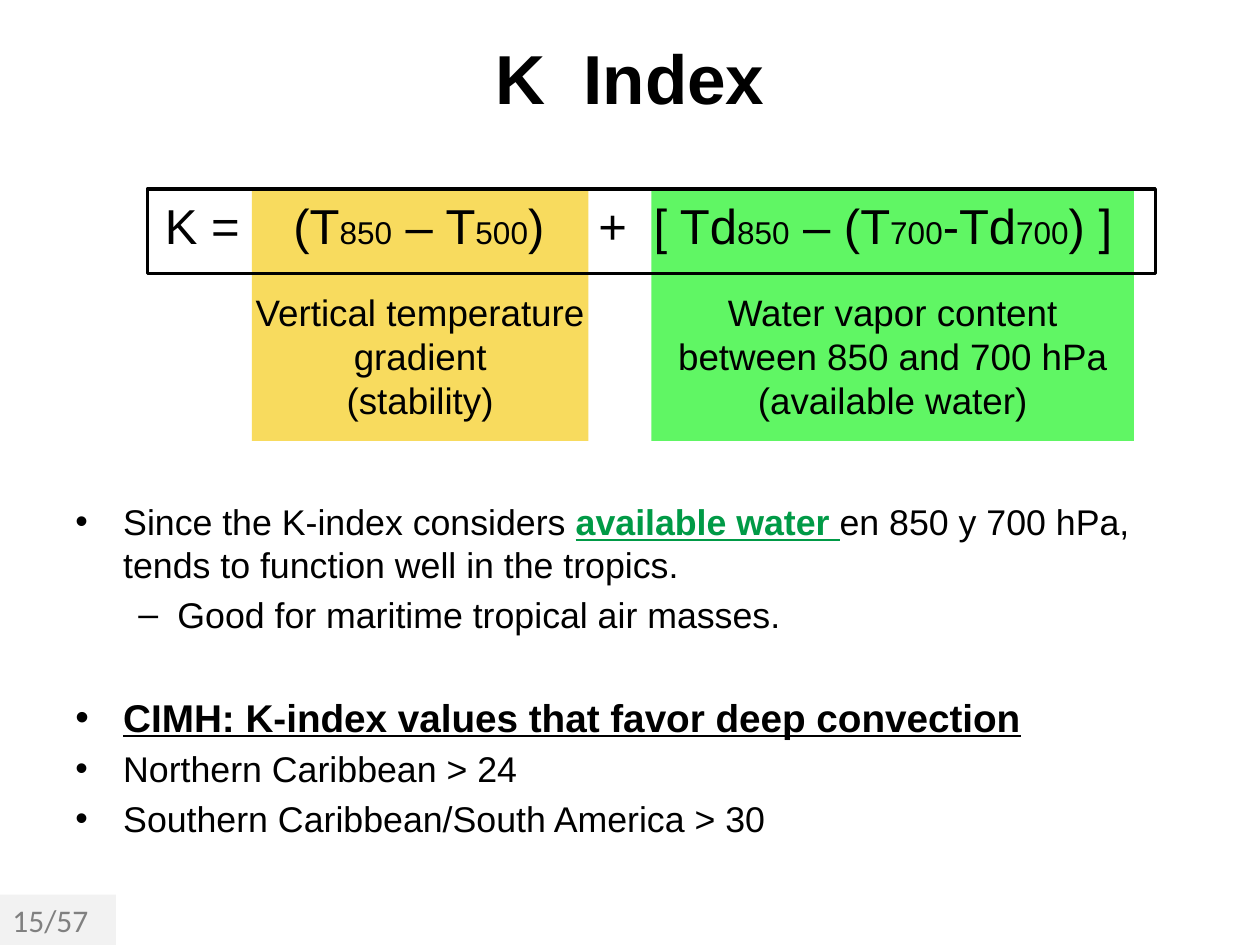
from dataclasses import dataclass

from lxml.etree import SubElement
from pptx import Presentation
from pptx.dml.color import RGBColor as Rgb
from pptx.enum.shapes import MSO_SHAPE as Shape
from pptx.enum.text import MSO_ANCHOR as Anchor, PP_ALIGN as Align
from pptx.oxml.ns import qn
from pptx.util import Inches, Pt


@dataclass(frozen=True)
class Theme:
    font: str = "Arial"
    number_font: str = "Calibri"
    ink: str = "000000"
    water: str = "60F664"
    gradient: str = "F8DB5E"
    accent: str = "009A46"
    footer: str = "F2F2F2"
    footer_ink: str = "808080"
    title_size: float = 39.6
    formula_size: float = 28
    small_size: float = 18
    label_size: float = 21
    body_size: float = 20.4
    heading_size: float = 22.1


THEME = Theme()


def add_rect(page, box, fill=None, line=None):
    rect = page.shapes.add_shape(Shape.RECTANGLE, *map(Inches, box))
    rect.shadow.inherit = False
    if fill:
        rect.fill.solid()
        rect.fill.fore_color.rgb = Rgb.from_string(fill)
    else:
        rect.fill.background()
    if line:
        rect.line.color.rgb = Rgb.from_string(line)
        rect.line.width = Pt(2)
    else:
        rect.line.fill.background()
    return rect


def add_text_frame(page, box, wrap=True):
    frame = page.shapes.add_textbox(*map(Inches, box)).text_frame
    frame.word_wrap = wrap
    return frame


def style(font, size, color=THEME.ink, bold=False, name=THEME.font):
    font.name, font.size, font.bold = name, Pt(size), bold
    font.color.rgb = Rgb.from_string(color)


def add_lines(frame, lines, size, bold=False):
    for index, line in enumerate(lines):
        para = frame.paragraphs[0] if index == 0 else frame.add_paragraph()
        para.text = line
        para.alignment = Align.CENTER
        style(para.font, size, bold=bold)


def set_bullet(para, mark, margin, hang):
    props = para._p.get_or_add_pPr()
    props.set("marL", str(Inches(margin)))
    props.set("indent", str(-Inches(hang)))
    SubElement(props, qn("a:buFont"), typeface=THEME.font)
    SubElement(props, qn("a:buChar"), char=mark)


def set_tabs(para, stops):
    tabs = SubElement(para._p.get_or_add_pPr(), qn("a:tabLst"))
    for stop in stops:
        SubElement(tabs, qn("a:tab"), pos=str(Inches(stop)), algn="l")


def add_title(page, box):
    frame = add_text_frame(page, box)
    frame.vertical_anchor = Anchor.MIDDLE
    add_lines(frame, ["K  Index"], THEME.title_size, bold=True)


def add_formula(page, box):
    left, top, width, height = box
    para = add_text_frame(page, (left + 0.04, top, width - 0.19, 0.57), wrap=False).paragraphs[0]
    set_tabs(para, (1.02, 3.44, 3.88))
    pieces = ["K =\t(T", "850", " – T", "500", ")\t+\t[ Td", "850",
              " – (T", "700", "-Td", "700", ") ]"]
    for piece in pieces:
        span = para.add_run()
        span.text = piece
        size = THEME.small_size if piece.isdigit() else THEME.formula_size
        style(span.font, size)
    add_rect(page, box, line=THEME.ink)


def add_term(page, box, fill, lines, overhang=0):
    left, top, width, height = box
    add_rect(page, box, fill)
    label_box = (left - overhang, top + 0.75, width + 2 * overhang, 1.16)
    add_lines(add_text_frame(page, label_box), lines, THEME.label_size)


def add_body(page, box):
    top_level, sub_level = ("•", 0.38, 0.38), ("–", 0.81, 0.31)
    size, gap = THEME.body_size, 4.1
    items = [
        (["Since the K-index considers ", "available water ",
          "en 850 y 700 hPa, tends to function well in the tropics."], top_level, size, gap),
        (["Good for maritime tropical air masses."], sub_level, size, gap),
        (["CIMH: K-index values that favor deep convection"],
         top_level, THEME.heading_size, 33),
        (["Northern Caribbean > 24"], top_level, size, gap),
        (["Southern Caribbean/South America > 30"], top_level, size, gap),
    ]
    frame = add_text_frame(page, box)
    for index, (pieces, bullet, text_size, space) in enumerate(items):
        para = frame.paragraphs[0] if index == 0 else frame.add_paragraph()
        para.space_before = Pt(space)
        set_bullet(para, *bullet)
        heading = text_size == THEME.heading_size
        style(para.font, text_size, bold=heading)
        para.font.underline = heading
        for piece in pieces:
            span = para.add_run()
            span.text = piece
            if piece == "available water ":
                style(span.font, text_size, THEME.accent, bold=True)
                span.font.underline = True


def add_page_number(page, box):
    frame = add_rect(page, box, THEME.footer).text_frame
    frame.vertical_anchor = Anchor.MIDDLE
    para = frame.paragraphs[0]
    para.text = "15/57"
    para.alignment = Align.LEFT
    style(para.font, THEME.small_size, THEME.footer_ink, name=THEME.number_font)


def main():
    deck = Presentation()
    deck.slide_width, deck.slide_height = Inches(10), Inches(7.5)
    page = deck.slides.add_slide(deck.slide_layouts[6])
    add_title(page, (0.5, 0.3, 9, 0.62))
    add_term(page, (5.17, 1.5, 3.83, 2), THEME.water,
             ["Water vapor content between 850 and 700 hPa", "(available water)"])
    add_term(page, (2, 1.5, 2.67, 2), THEME.gradient,
             ["Vertical temperature", "gradient", "(stability)"], overhang=0.08)
    add_formula(page, (1.17, 1.5, 8, 0.67))
    add_body(page, (0.5, 3.92, 9, 2.5))
    add_page_number(page, (0, 7.1, 0.92, 0.4))
    deck.save("out.pptx")


if __name__ == "__main__":
    main()
